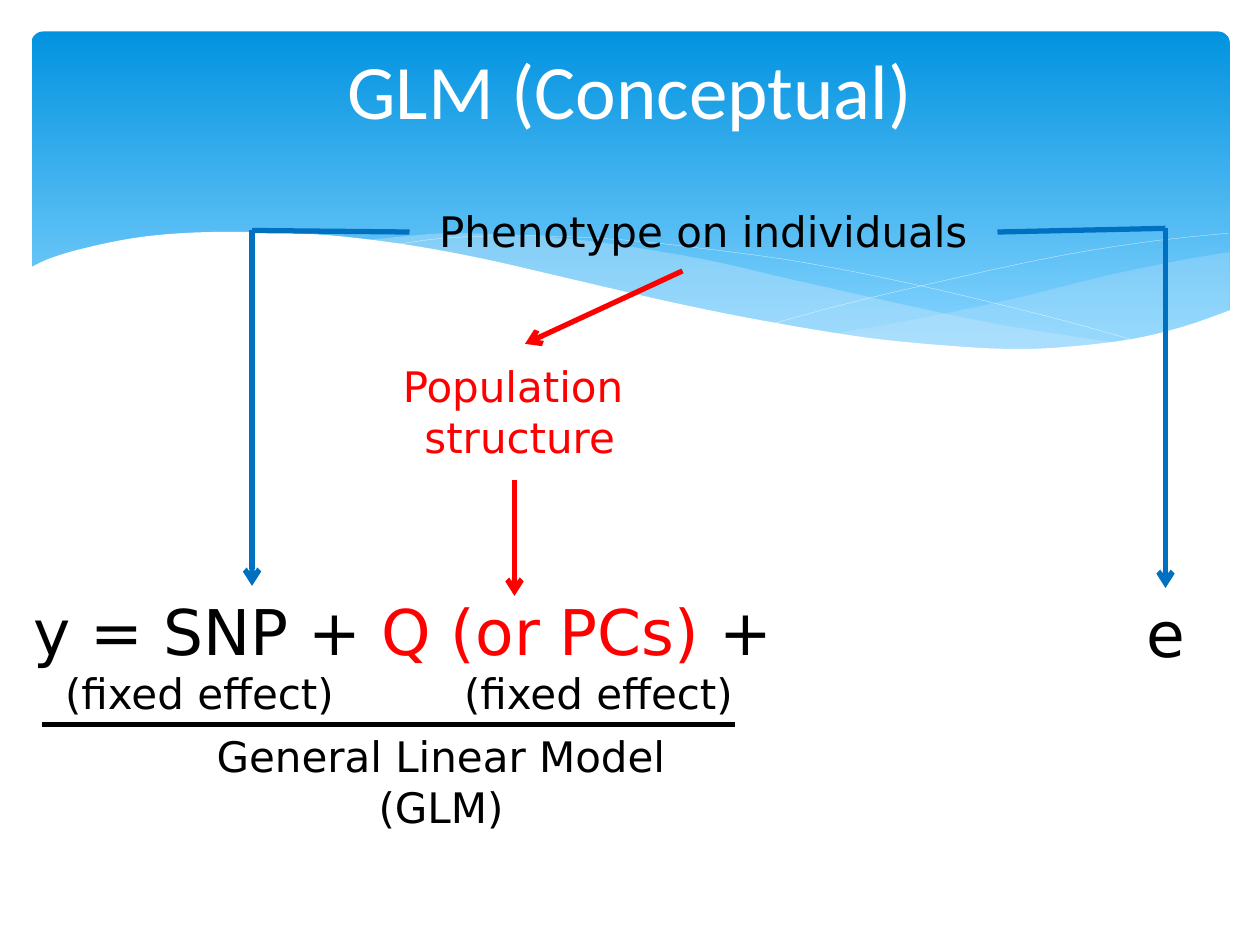
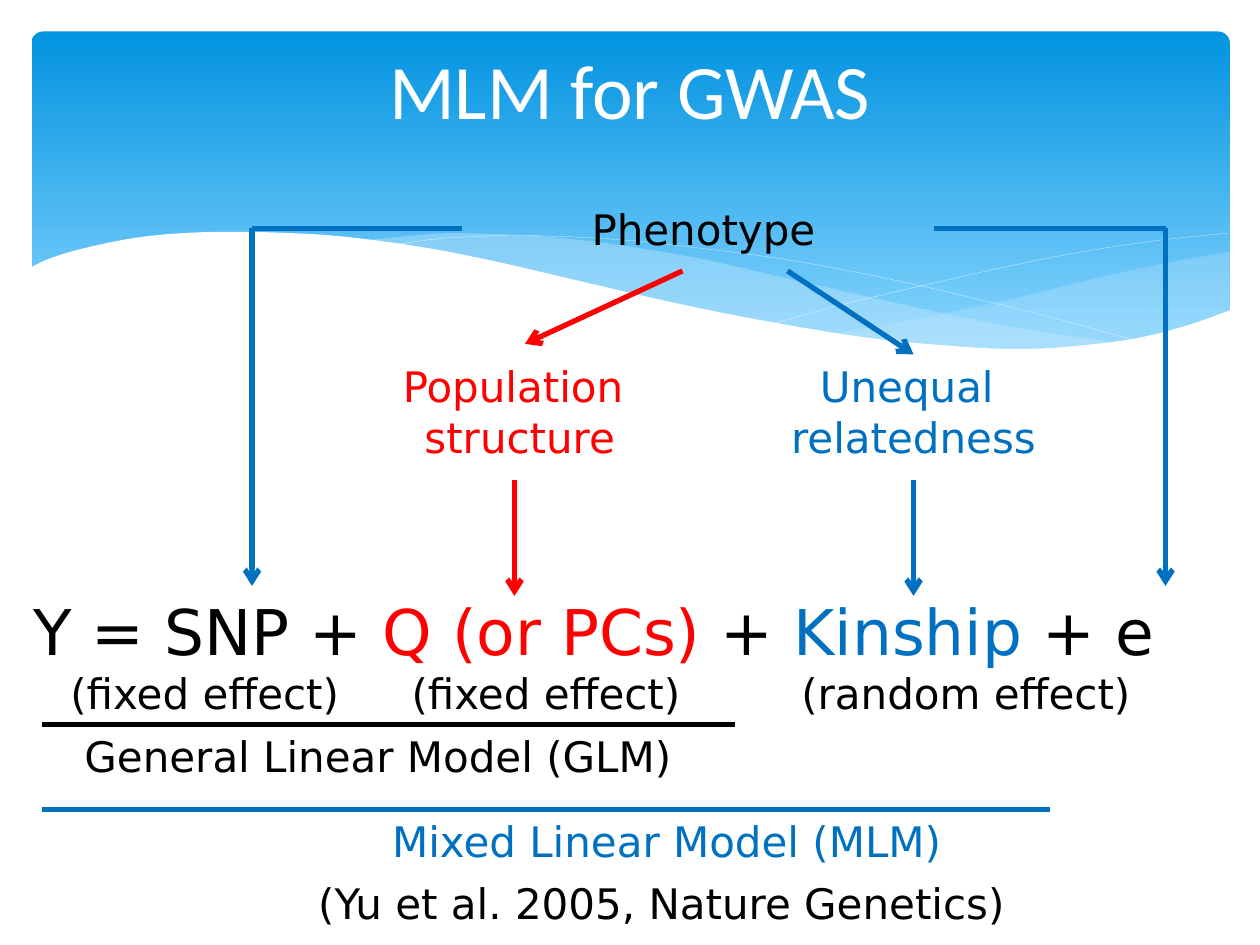
from dataclasses import dataclass

from lxml.etree import SubElement
from pptx import Presentation
from pptx.dml.color import RGBColor
from pptx.enum.shapes import MSO_CONNECTOR, MSO_SHAPE
from pptx.enum.text import MSO_ANCHOR, MSO_AUTO_SIZE, PP_ALIGN
from pptx.oxml.ns import qn
from pptx.util import Inches, Pt

HUES = {
    "black": "000000", "white": "FFFFFF", "red": "FF0000", "blue": "0070C0",
    "deep": "0293E0", "sky": "83D3FE", "mist": "C6E7FC",
}
BODY = {"name": "DejaVu Sans", "size": Pt(24)}
LARGE = {"name": "DejaVu Sans", "size": Pt(36)}
HEAD = {"name": "Calibri", "size": Pt(44)}
TOP, LEFT, RIGHT = 0, 1, 3

# Wave outlines, in inches of a 10 by 7.5 page; each closed one joins its curves
CREST = [
    [(9.76, 2), (9.35, 2.07), (8.91, 2.16), (8.61, 2.23), (8.05, 2.37),
     (7.29, 2.53), (6.61, 2.65)],
    [(6.61, 2.65), (7.05, 2.71), (7.57, 2.76), (8.14, 2.78), (8.72, 2.74),
     (9.21, 2.65), (9.76, 2.47)],
]
SWELL = [
    [(8.93, 2.73), (8.07, 2.6), (7.41, 2.47), (6.29, 2.22), (5.69, 2.08),
     (5.14, 1.98), (4.65, 1.91), (4.2, 1.87), (3.61, 1.85), (3.28, 1.87),
     (2.86, 1.91)],
    [(2.86, 1.91), (3.42, 1.99), (4.04, 2.11), (4.49, 2.22), (5.3, 2.4),
     (6.01, 2.55), (6.65, 2.66), (7.22, 2.74), (7.85, 2.78), (8.38, 2.78),
     (8.93, 2.73)],
]
FALL = [[(3.09, 1.95), (3.53, 1.89), (4.16, 1.87), (4.89, 1.9), (5.56, 1.97),
         (6.36, 2.08), (7.27, 2.26), (8.31, 2.51), (9.07, 2.72)]]
RISE = [[(6.13, 2.57), (6.72, 2.41), (7.48, 2.23), (8.36, 2.04),
         (9.1, 1.92), (9.75, 1.85)]]
SHORE = [
    [(9.77, 2.46), (9.4, 2.59), (8.99, 2.69), (8.5, 2.75), (8.09, 2.77),
     (7.61, 2.75), (6.88, 2.68), (6.03, 2.54), (5.29, 2.39), (4.47, 2.2),
     (3.91, 2.07), (3.4, 1.97), (2.92, 1.9), (2.5, 1.86), (1.93, 1.84),
     (1.46, 1.85), (1.06, 1.89), (0.67, 1.97), (0.4, 2.05), (0.23, 2.13)],
    [(0.23, 3.29), (9.77, 3.29)],
]


@dataclass
class Box:
    """An area of the slide, ruled into columns and rows."""
    x: int
    y: int
    w: int
    h: int
    cols: float
    rows: float

    def spot(self, col, row):
        return (self.x + round(self.w * col / self.cols),
                self.y + round(self.h * row / self.rows))

    def area(self, col, row, wide, high):
        return (*self.spot(col, row), round(self.w * wide / self.cols),
                round(self.h * high / self.rows))


def hue(name):
    return RGBColor.from_string(HUES[name])


def style(item, values):
    for key, value in values.items():
        setattr(item, key, value)


def bend(dots, steps=6):
    """Points of a smooth curve through the given dots."""
    ends = [dots[0], *dots, dots[-1]]
    out = [dots[0]]
    for a, b, c, d in zip(ends, ends[1:], ends[2:], ends[3:]):
        for n in range(1, steps + 1):
            t = n / steps
            out.append(tuple(
                q + t / 2 * (r - p + t * (2 * p - 5 * q + 4 * r - s
                                          + t * (3 * (q - r) + s - p)))
                for p, q, r, s in zip(a, b, c, d)))
    return out


def wave(slide, box, curves, fill=None, alpha=100):
    dots = [box.spot(*dot) for curve in curves for dot in bend(curve)]
    pen = slide.shapes.build_freeform(*dots[0], scale=1.0)
    pen.add_line_segments(dots[1:], close=bool(fill))
    shape = pen.convert_to_shape()
    shape.shadow.inherit = False
    if not fill:
        shape.fill.background()
        shape.line.color.rgb = hue("white")
        shape.line.width = Pt(0.1)
        return
    shape.line.fill.background()
    shape.fill.solid()
    shape.fill.fore_color.rgb = hue(fill)
    if alpha < 100:
        tint = shape._element.spPr.find(qn("a:solidFill"))[0]
        SubElement(tint, qn("a:alpha"), val=str(alpha * 1000))


def text(slide, box, area, lines, font=BODY, align=PP_ALIGN.CENTER, **frame):
    """Each line is a list of (words, colour) runs."""
    shape = slide.shapes.add_textbox(*box.area(*area))
    body = shape.text_frame
    style(body, {"word_wrap": True,
                 "auto_size": MSO_AUTO_SIZE.SHAPE_TO_FIT_TEXT, **frame})
    for n, line in enumerate(lines):
        para = body.add_paragraph() if n else body.paragraphs[0]
        para.alignment = align
        for words, tone in line:
            run = para.add_run()
            run.text = words
            style(run.font, font)
            run.font.color.rgb = hue(tone)
    return shape


def label(slide, box, area, *lines, tone="black"):
    return text(slide, box, area, [[(line, tone)] for line in lines])


def link(slide, box, start, end, tone, arrow=True, begin=None, finish=None):
    line = slide.shapes.add_connector(
        MSO_CONNECTOR.STRAIGHT, *box.spot(*start), *box.spot(*end))
    line.line.color.rgb = hue(tone)
    line.line.width = Pt(3)
    props = line._element.spPr
    if arrow:
        SubElement(props.find(qn("a:ln")), qn("a:tailEnd"), type="arrow")
    SubElement(props, qn("a:effectLst"))
    if begin:
        line.begin_connect(*begin)
    if finish:
        line.end_connect(*finish)


def backdrop(slide, box, title):
    # Gradient band
    band = slide.shapes.add_shape(
        MSO_SHAPE.ROUNDED_RECTANGLE, *box.area(0.25, 0.25, 9.51, 2.7))
    band.adjustments[0] = 0.034
    band.shadow.inherit = False
    band.line.fill.background()
    band.fill.gradient()
    band.fill.gradient_angle = 270
    for stop, tone, place in zip(band.fill.gradient_stops, ("deep", "sky"), (0, 0.9)):
        stop.color.rgb = hue(tone)
        stop.position = place
    # Waves
    wave(slide, box, CREST, "mist", 29)
    wave(slide, box, SWELL, "mist", 40)
    wave(slide, box, FALL)
    wave(slide, box, RISE)
    wave(slide, box, SHORE, "white")
    # Title
    text(slide, box, (0.5, 0.08, 9, 1.25), [[(title, "white")]], HEAD,
         vertical_anchor=MSO_ANCHOR.MIDDLE, auto_size=MSO_AUTO_SIZE.NONE)


def factor(slide, box, col, lines, tone, area, start, end, join=False):
    """A named cause, the arrow into it and the arrow down to its term."""
    name = label(slide, box, area, *lines, tone=tone)
    link(slide, box, start, end, tone, finish=(name, TOP) if join else None)
    link(slide, box, (col, 45.7), (col, 56.75), tone)


def cause(slide, box):
    factor(slide, box, 49, ("Population ", "structure"), "red",
           (37, 33.75, 25, 10.9), (65, 25.8), (50, 32.75))


def side(slide, box, start, corner, begin=None, finish=None):
    """A line out to the corner, then an arrow down to the equation."""
    link(slide, box, start, corner, "blue", arrow=False, begin=begin)
    link(slide, box, corner, (corner[0], 55.8), "blue", finish=finish)


def sums(slide, box, wide, runs):
    text(slide, box, (2, 55.8, wide, 8.5), [runs], LARGE, PP_ALIGN.LEFT)


def notes(slide, box, spans):
    for words, col, wide in spans:
        label(slide, box, (col, 63, wide, 6.1), words)


def model(slide, box, area, words, end, tone="black"):
    """A rule under the terms with the model's name below it."""
    label(slide, box, area, words, tone=tone)
    link(slide, box, (end, area[1]), (4, area[1]), tone, arrow=False)


def glm(slide, box):
    # Phenotype and its causes
    trait = label(slide, box, (39, 19, 56, 6.2), "Phenotype on individuals")
    cause(slide, box)
    # Equation
    sums(slide, box, 96, [("y = SNP + ", "black"), ("Q (or PCs)", "red"),
                          (" +", "black")])
    rest = text(slide, box, (105, 56, 12, 8.5), [[("e", "black")]], LARGE)
    notes(slide, box, [("(fixed effect)", 3, 32), ("(fixed effect)", 36, 42)])
    # Side arrows
    side(slide, box, (39, 22.1), (24, 21.95), (trait, LEFT))
    side(slide, box, (95, 22.1), (111, 21.75), (trait, RIGHT), (rest, TOP))
    # Model name
    model(slide, box, (16, 69, 52, 4.8), "General Linear Model (GLM)", 70)


def mlm(slide, box):
    # Phenotype and its causes
    label(slide, box, (43, 18.75, 48, 6.1), "Phenotype")
    cause(slide, box)
    factor(slide, box, 87, ("Unequal ", "relatedness"), "blue",
           (74, 33.75, 26, 10.9), (75, 25.8), (87, 33.75), join=True)
    # Equation
    sums(slide, box, 116, [("Y = SNP + ", "black"), ("Q (or PCs)", "red"),
                           (" + ", "black"), ("Kinship", "blue"),
                           (" + e", "black")])
    notes(slide, box, [("(fixed effect)", 4, 31), ("(fixed effect)", 36, 32),
                       ("(random effect)", 74, 36)])
    # Side arrows
    side(slide, box, (44, 21.75), (24, 21.75))
    side(slide, box, (89, 21.75), (111, 21.75))
    # Model names and source
    model(slide, box, (4, 69, 64, 6.1), "General Linear Model (GLM)", 70)
    model(slide, box, (31, 77.1, 65, 6.1), "Mixed Linear Model (MLM)", 100, "blue")
    label(slide, box, (26, 83, 74, 6.1), "(Yu et al. 2005, Nature Genetics)")


def main():
    deck = Presentation()
    style(deck, {"slide_width": Inches(10), "slide_height": Inches(7.5)})
    page = (0, 0, deck.slide_width, deck.slide_height)
    for title, draw in (("GLM (Conceptual)", glm), ("MLM for GWAS", mlm)):
        slide = deck.slides.add_slide(deck.slide_layouts[6])
        backdrop(slide, Box(*page, cols=10, rows=7.5), title)
        draw(slide, Box(*page, cols=120, rows=90))
    deck.save("out.pptx")


if __name__ == "__main__":
    main()
